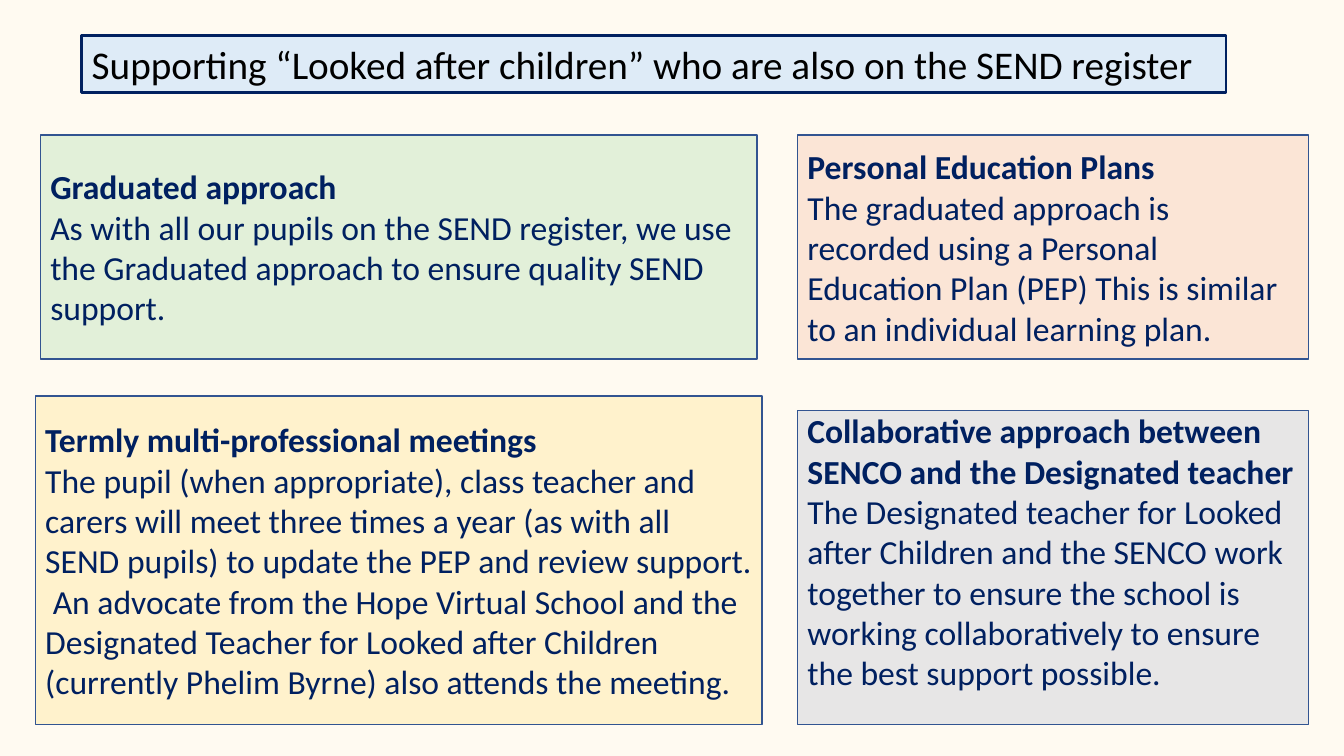
"""Build a slide on supporting looked after children with SEND."""
from pptx import Presentation
from pptx import util as u
from pptx.dml import color
from pptx.enum import shapes, text

NAVY = "002060"
CARD_LINE = "325491"
TITLE = "Supporting “Looked after children” who are also on the SEND register"
CARDS = [
    ((0.4, 1.34, 7.11, 2.22), "E2F0D9", "middle", "Graduated approach", [
        "As with all our pupils on the SEND register, we use the Graduated "
        "approach to ensure quality SEND support."]),
    ((7.91, 1.34, 5.07, 2.22), "FBE5D6", "middle", "Personal Education Plans", [
        "The graduated approach is recorded using a Personal Education Plan "
        "(PEP) This is similar to an individual learning plan."]),
    ((0.35, 3.93, 7.21, 3.26), "FFF2CC", "middle", "Termly multi-professional meetings", [
        "The pupil (when appropriate), class teacher and carers will meet "
        "three times a year (as with all SEND pupils) to update the PEP and "
        "review support.",
        " An advocate from the Hope Virtual School and the Designated Teacher "
        "for Looked after Children (currently Phelim Byrne) also attends the "
        "meeting."]),
    ((7.91, 4.07, 5.07, 3.12), "E7E6E6", "top",
     "Collaborative approach between SENCO and the Designated teacher", [
        "The Designated teacher for Looked after Children and the SENCO work "
        "together to ensure the school is working collaboratively to ensure "
        "the best support possible."]),
]


def rgb(value):
    """Return the colour for a hex string."""
    return color.RGBColor.from_string(value)


def paint(shape, fill, line, width):
    """Give a shape a solid fill and an outline."""
    shape.fill.solid()
    shape.fill.fore_color.rgb = rgb(fill)
    shape.line.color.rgb = rgb(line)
    shape.line.width = u.Pt(width)


def write(paragraph, words, size=24, colour=NAVY, bold=False):
    """Write one left-aligned run into a paragraph."""
    paragraph.alignment = text.PP_ALIGN.LEFT
    run = paragraph.add_run()
    run.text = words
    run.font.name = "Calibri"
    run.font.size = u.Pt(size)
    run.font.bold = bold
    run.font.color.rgb = rgb(colour)


def prepare_frame(frame, anchor, top=0.05):
    """Set wrapping, anchoring and insets of a text frame."""
    frame.word_wrap = True
    frame.auto_size = text.MSO_AUTO_SIZE.NONE
    frame.vertical_anchor = anchor
    frame.margin_left = frame.margin_right = u.Inches(0.1)
    frame.margin_top = u.Inches(top)
    frame.margin_bottom = u.Inches(0.05)


def add_title(slide, box):
    """Place the outlined title in its box."""
    title = slide.shapes.title
    title.left, title.top, title.width, title.height = map(u.Inches, box)
    paint(title, "DEEBF7", NAVY, 1.75)
    prepare_frame(title.text_frame, text.MSO_ANCHOR.TOP)
    write(title.text_frame.paragraphs[0], TITLE, size=28, colour="000000")


def add_card(slide, box, fill, anchor, heading, body):
    """Place a coloured card with a bold heading above its body."""
    card = slide.shapes.add_shape(shapes.MSO_SHAPE.RECTANGLE, *map(u.Inches, box))
    card.shadow.inherit = False
    paint(card, fill, CARD_LINE, 1)
    frame = card.text_frame
    if anchor == "top":
        prepare_frame(frame, text.MSO_ANCHOR.TOP, top=0)
    else:
        prepare_frame(frame, text.MSO_ANCHOR.MIDDLE)
    write(frame.paragraphs[0], heading, bold=True)
    for words in body:
        write(frame.add_paragraph(), words)


def main():
    """Build and save the presentation."""
    presentation = Presentation()
    presentation.slide_width = u.Inches(13.33)
    presentation.slide_height = u.Inches(7.5)
    slide = presentation.slides.add_slide(presentation.slide_layouts[5])
    slide.background.fill.solid()
    slide.background.fill.fore_color.rgb = rgb("FFFAF1")
    add_title(slide, (0.81, 0.35, 11.35, 0.57))
    for card in CARDS:
        add_card(slide, *card)
    presentation.save("out.pptx")


if __name__ == "__main__":
    main()
